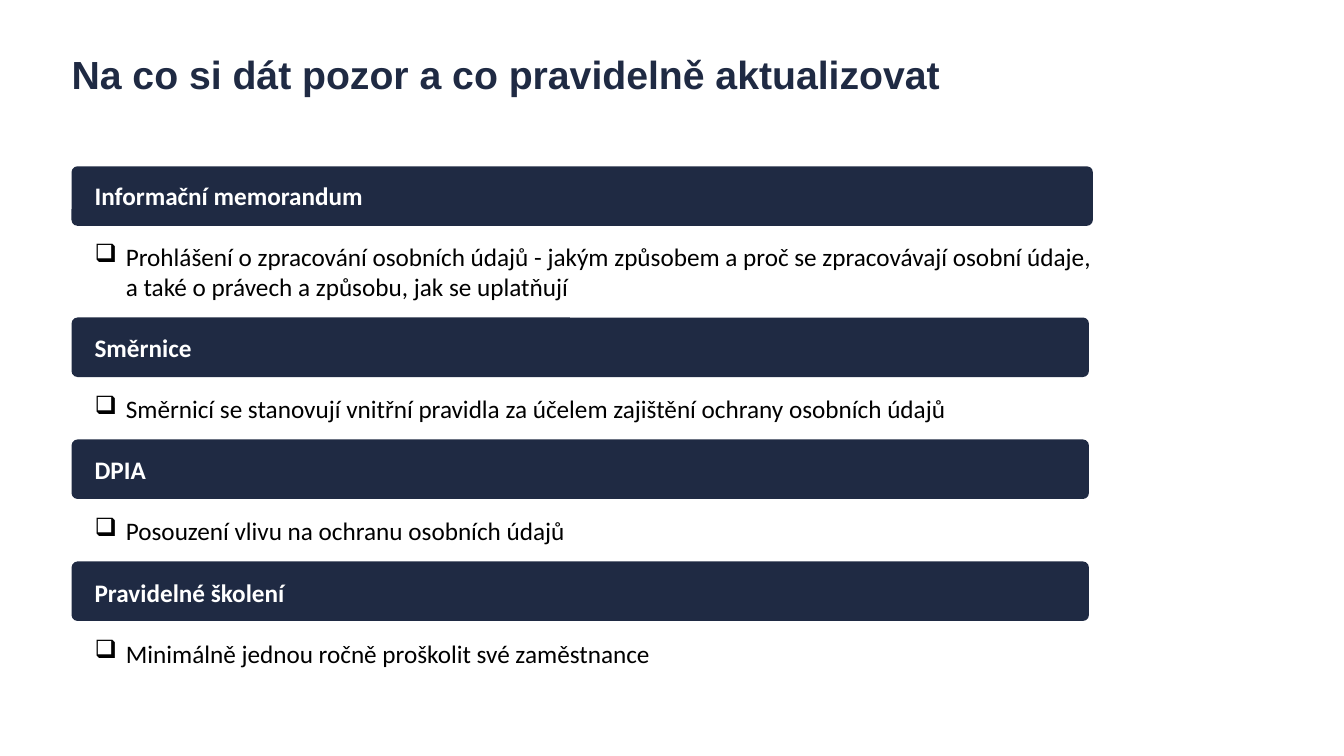
import pptx
import pptx.util
import pptx.dml.color
import pptx.enum.shapes
import pptx.enum.text
import pptx.oxml.ns
import lxml.etree
from pptx.util import Inches

NAVY = "1F2A43"
WHITE = "FFFFFF"
BLACK = "000000"

TITLE = "Na co si dát pozor a co pravidelně aktualizovat"

# Heading, description, bar width, distance to the next bar
TOPICS = [
    ("Informační memorandum",
     "Prohlášení o zpracování osobních údajů - jakým způsobem a proč se "
     "zpracovávají osobní údaje, a také o právech a způsobu, jak se uplatňují",
     10.13, 1.5),
    ("Směrnice",
     "Směrnicí se stanovují vnitřní pravidla za účelem zajištění ochrany osobních údajů",
     10.09, 1.21),
    ("DPIA", "Posouzení vlivu na ochranu osobních údajů", 10.09, 1.21),
    ("Pravidelné školení", "Minimálně jednou ročně proškolit své zaměstnance", 10.09, 1.21),
]


def color(hex_value):
    return pptx.dml.color.RGBColor.from_string(hex_value)


def style(paragraph, font_name, size, hex_value, bold):
    for run in paragraph.runs:
        run.font.name = font_name
        run.font.size = pptx.util.Pt(size)
        run.font.bold = bold
        run.font.color.rgb = color(hex_value)


def add_check_box(paragraph):
    properties = paragraph._p.get_or_add_pPr()
    properties.set("marL", str(Inches(0.31)))
    properties.set("indent", str(Inches(-0.31)))
    bullet = lxml.etree.SubElement(properties, pptx.oxml.ns.qn("a:buChar"))
    bullet.set("char", "❑")


def add_title(slide):
    frame = slide.shapes.add_textbox(
        Inches(0.71), Inches(0.51), Inches(11.81), Inches(0.46)).text_frame
    frame.word_wrap = True
    frame.margin_left = frame.margin_right = frame.margin_top = frame.margin_bottom = 0
    frame.vertical_anchor = pptx.enum.text.MSO_ANCHOR.BOTTOM
    frame.text = TITLE
    frame.paragraphs[0].line_spacing = 0.9
    style(frame.paragraphs[0], "Arial", 28, NAVY, True)


def add_bar(slide, top, width):
    bar = slide.shapes.add_shape(
        pptx.enum.shapes.MSO_SHAPE.ROUNDED_RECTANGLE,
        Inches(0.71), Inches(top), Inches(width), Inches(0.59))
    bar.adjustments[0] = 0.1
    bar.shadow.inherit = False
    bar.fill.solid()
    bar.fill.fore_color.rgb = color(NAVY)
    bar.line.fill.background()


def add_topics(slide):
    frame = slide.shapes.add_textbox(
        Inches(0.84), Inches(1.74), Inches(10.13), Inches(5.25)).text_frame
    frame.word_wrap = True
    for index, (heading, description, _, _) in enumerate(TOPICS):
        head = frame.add_paragraph() if index else frame.paragraphs[0]
        head.text = heading
        if index:
            head.space_before = pptx.util.Pt(22)
        style(head, "Calibri", 18, WHITE, True)

        body = frame.add_paragraph()
        body.text = description
        add_check_box(body)
        body.space_before = pptx.util.Pt(22)
        style(body, "Calibri", 18, BLACK, False)


def main():
    deck = pptx.Presentation()
    deck.slide_width = Inches(13.33)
    deck.slide_height = Inches(7.5)
    slide = deck.slides.add_slide(deck.slide_layouts[6])

    add_title(slide)

    # Heading bars behind the text
    top = 1.65
    for _, _, width, step in TOPICS:
        add_bar(slide, top, width)
        top += step

    add_topics(slide)
    deck.save("out.pptx")


if __name__ == "__main__":
    main()
